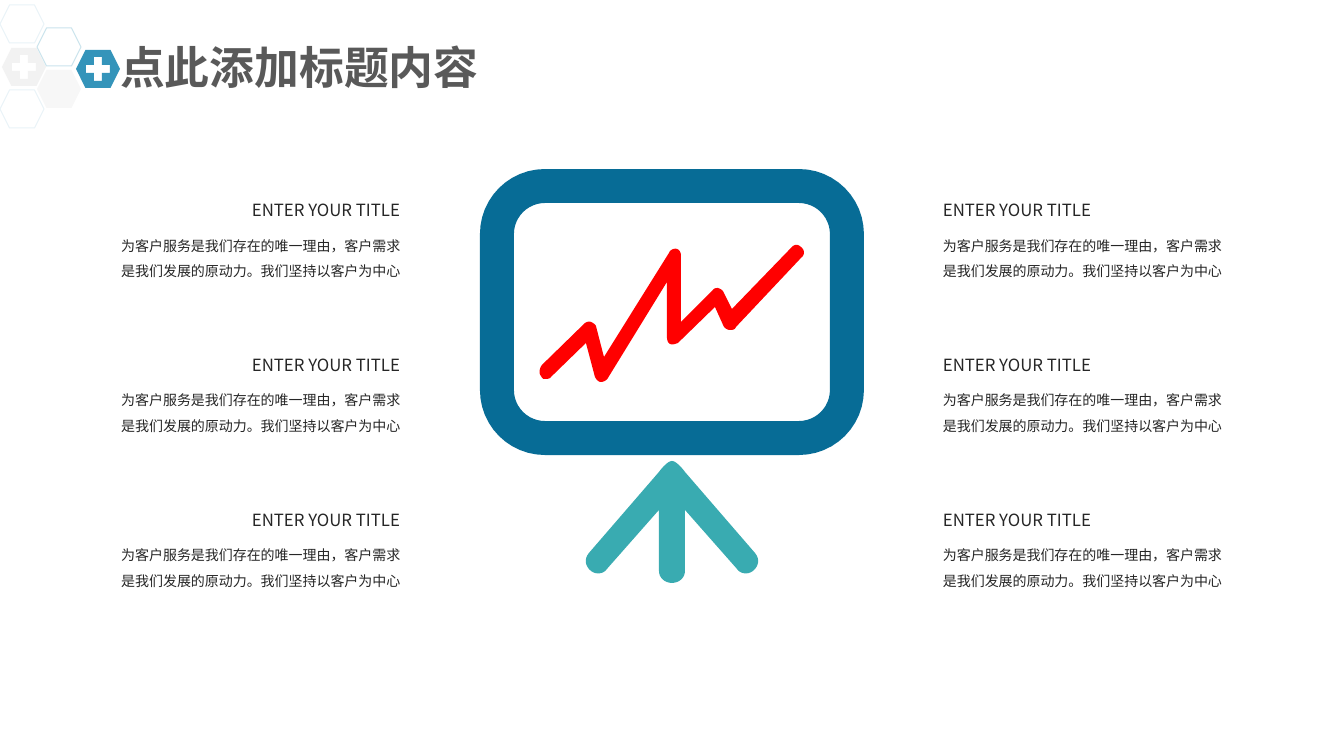
from math import cos, pi, sin

from lxml.etree import SubElement
from pptx import Presentation
from pptx.dml.color import RGBColor
from pptx.enum.shapes import MSO_SHAPE
from pptx.enum.text import MSO_ANCHOR, MSO_AUTO_SIZE, PP_ALIGN
from pptx.oxml.ns import qn
from pptx.util import Emu, Pt

PX = 914400 / 100.8
SKY = RGBColor(0x34, 0x94, 0xBA)
GREY = RGBColor(0xBF, 0xBF, 0xBF)
NAVY = RGBColor(0x07, 0x6C, 0x96)
TEAL = RGBColor(0x39, 0xAB, 0xB1)
RED = RGBColor(0xFF, 0x00, 0x00)
TITLE_COLOR = RGBColor(0x59, 0x59, 0x59)
TEXT_COLOR = RGBColor(0x26, 0x26, 0x26)
TITLE_FONT, TEXT_FONT = "Noto Sans CJK SC", "Noto Sans CJK JP"

# Content
TITLE = "点此添加标题内容"
ITEM = ("ENTER YOUR TITLE",
        "为客户服务是我们存在的唯一理由，客户需求是我们发展的原动力。我们坚持以客户为中心")
COLUMNS = [(102, PP_ALIGN.RIGHT), (933, PP_ALIGN.LEFT)]
ROWS, ROW_TOP, ROW_STEP = 3, 185, 155

# Hexagons: left, top, fill, line, opacity in percent
HEX_W, HEX_H = 44, 38
HEXAGONS = [(37, 28, None, SKY, 26), (37, 70, GREY, None, 12),
            (0, 5, None, SKY, 11), (0, 90, None, SKY, 11)]
CROSS_HEXAGONS = [(2, 48, GREY, 20), (76, 50, SKY, 100)]

# Outlines: (x, y) is a corner, six numbers are a Bezier curve
BOARD = (480, 169, 384, 286)
BOARD_RADIUS, BOARD_BORDER = 65, 34
LEGS_CENTER = 672
LEGS_HALF = [(0, 461), (5, 461, 13, 472, 13, 472), (83, 553),
             (88, 559, 87, 566, 81, 571), (76, 575, 68, 574, 65, 569),
             (13, 510), (13, 571), (13, 578, 7, 583, 0, 583)]
TREND = [(541, 376), (539, 374, 539, 369, 542, 365),
         (584, 324), (586, 322, 589, 321, 591, 322), (593, 323, 595, 324, 596, 326),
         (604, 357),
         (669, 253), (670, 250, 674, 248, 677, 249), (680, 250, 681, 253, 681, 256),
         (681, 322),
         (713, 290), (714, 288, 717, 288, 718, 288), (721, 289, 722, 290, 723, 291),
         (732, 309),
         (791, 248), (794, 244, 798, 244, 801, 247), (805, 250, 805, 255, 801, 258),
         (736, 327), (735, 330, 732, 330, 730, 330), (728, 330, 726, 329, 724, 327),
         (715, 307),
         (678, 343), (675, 344, 673, 345, 670, 344), (668, 343, 667, 340, 667, 337),
         (667, 282),
         (608, 378), (607, 380, 604, 382, 601, 382), (598, 382, 596, 379, 595, 377),
         (586, 343),
         (551, 377), (550, 379, 547, 379, 544, 379), (543, 379, 542, 378, 541, 376)]


def px(*values):
    return [Emu(round(v * PX)) for v in values]


def trace(outline, steps=8):
    """Turn corners and curves into plain points."""
    points = []
    for part in outline:
        if len(part) == 2:
            points.append(part)
            continue
        x0, y0 = points[-1]
        x1, y1, x2, y2, x3, y3 = part
        for i in range(1, steps + 1):
            t = i / steps
            a, b, c, d = (1 - t)**3, 3 * t * (1 - t)**2, 3 * t**2 * (1 - t), t**3
            points.append((a * x0 + b * x1 + c * x2 + d * x3,
                           a * y0 + b * y1 + c * y2 + d * y3))
    return points


def rounded(x, y, w, h, r, steps=12):
    """Points of a rounded rectangle, clockwise from the right side."""
    corners = [(x + w - r, y + h - r), (x + r, y + h - r),
               (x + r, y + r), (x + w - r, y + r)]
    return [(cx + r * cos((q + i / steps) * pi / 2), cy + r * sin((q + i / steps) * pi / 2))
            for q, (cx, cy) in enumerate(corners) for i in range(steps + 1)]


def paint(sp, fill=None, line=None, opacity=100):
    sp.shadow.inherit = False
    if fill is None:
        sp.fill.background()
    else:
        sp.fill.solid()
        sp.fill.fore_color.rgb = fill
    if line is None:
        sp.line.fill.background()
    else:
        sp.line.color.rgb = line
        sp.line.width = Pt(0.75)
    if opacity < 100:
        for clr in sp._element.spPr.iter(qn("a:srgbClr")):
            SubElement(clr, qn("a:alpha")).set("val", str(opacity * 1000))


def add_outline(shapes, contours, fill, opacity=100):
    contours = [[px(*point) for point in c] for c in contours]
    builder = shapes.build_freeform(*contours[0][0], scale=1.0)
    builder.add_line_segments(contours[0][1:])
    for contour in contours[1:]:
        builder.move_to(*contour[0])
        builder.add_line_segments(contour[1:])
    paint(builder.convert_to_shape(), fill, opacity=opacity)


def style(p, font, size, color, bold=False):
    for r in p.runs:
        r.font.name, r.font.size, r.font.bold = font, Pt(size), bold
        r.font.color.rgb = color
        SubElement(r._r.get_or_add_rPr(), qn("a:ea")).set("typeface", font)


prs = Presentation()
prs.slide_width, prs.slide_height = px(1344, 756)
slide = prs.slides.add_slide(prs.slide_layouts[5])
shapes = slide.shapes

# Hexagon ornament
for x, y, fill, line, opacity in HEXAGONS:
    sp = shapes.add_shape(MSO_SHAPE.HEXAGON, *px(x, y, HEX_W, HEX_H))
    paint(sp, fill, line, opacity)
for x, y, fill, opacity in CROSS_HEXAGONS:
    cx, cy, arm, half = x + HEX_W / 2, y + HEX_H / 2, 12, 4
    cut = HEX_H / 4
    right, bottom = x + HEX_W, y + HEX_H
    hexagon = [(x + cut, y), (right - cut, y), (right, cy),
               (right - cut, bottom), (x + cut, bottom), (x, cy)]
    quarter = [(-half, -arm), (-half, -half), (-arm, -half)]
    cross = []
    for _ in range(4):
        cross += [(cx + dx, cy + dy) for dx, dy in quarter]
        quarter = [(dy, -dx) for dx, dy in quarter]
    add_outline(shapes, [hexagon, cross], fill, opacity)

# Title
title = shapes.title
title.left, title.top, title.width, title.height = px(110, 35, 483, 65)
tf = title.text_frame
tf.text = TITLE
tf.word_wrap = True
tf.auto_size = MSO_AUTO_SIZE.SHAPE_TO_FIT_TEXT
tf.vertical_anchor = MSO_ANCHOR.TOP
tf.paragraphs[0].alignment = PP_ALIGN.LEFT
style(tf.paragraphs[0], TITLE_FONT, 32, TITLE_COLOR, True)

# Text columns
for x, align in COLUMNS:
    for row in range(ROWS):
        tf = shapes.add_textbox(*px(x, ROW_TOP + row * ROW_STEP, 308, 100)).text_frame
        tf.word_wrap = True
        tf.auto_size = MSO_AUTO_SIZE.SHAPE_TO_FIT_TEXT
        tf.text = "\n".join(ITEM)
        for p, size in zip(tf.paragraphs, (12, 10)):
            p.alignment, p.line_spacing, p.space_after = align, 1.5, Pt(6)
            style(p, TEXT_FONT, size, TEXT_COLOR)

# Board, legs and trend line
x, y, w, h = BOARD
b = BOARD_BORDER
inner = rounded(x + b, y + b, w - 2 * b, h - 2 * b, BOARD_RADIUS - b)
add_outline(shapes, [rounded(*BOARD, BOARD_RADIUS), inner[::-1]], NAVY)
half_legs = trace(LEGS_HALF)
legs = ([(LEGS_CENTER + dx, y) for dx, y in half_legs]
        + [(LEGS_CENTER - dx, y) for dx, y in half_legs[-2:0:-1]])
add_outline(shapes, [legs], TEAL)
add_outline(shapes, [trace(TREND)], RED)

prs.save("out.pptx")
